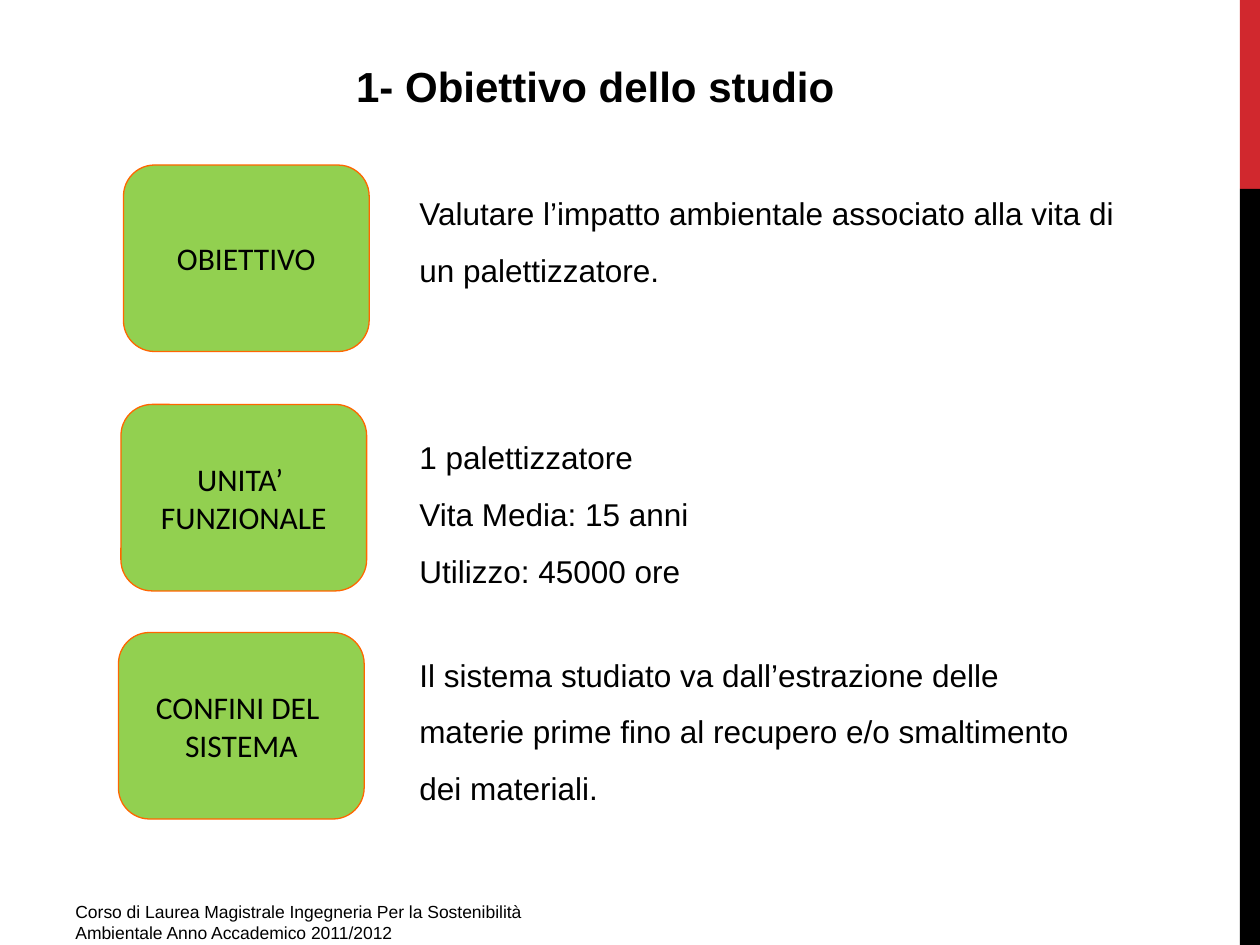
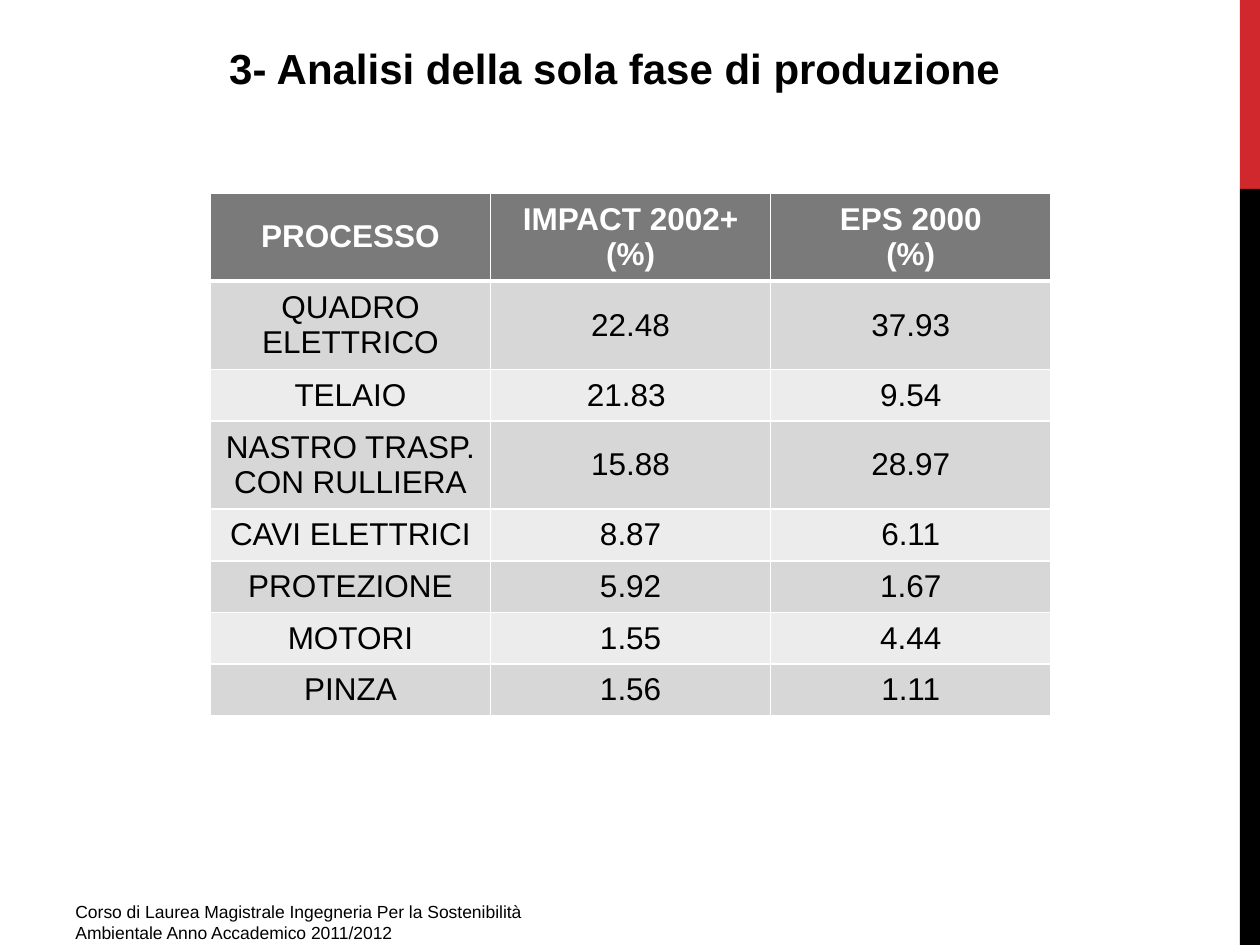
"""Build two slides on the life-cycle assessment of a palletiser."""
from dataclasses import dataclass

from lxml.etree import SubElement
from pptx import Presentation
from pptx.dml.color import RGBColor
from pptx.enum.shapes import MSO_SHAPE
from pptx.enum.text import MSO_ANCHOR, PP_ALIGN
from pptx.oxml.ns import qn
from pptx.util import Inches, Pt


@dataclass(frozen=True)
class Theme:
    black: RGBColor = RGBColor.from_string("000000")
    white: RGBColor = RGBColor.from_string("FFFFFF")
    red: RGBColor = RGBColor.from_string("D1282E")
    green: RGBColor = RGBColor.from_string("92D050")
    orange: RGBColor = RGBColor.from_string("FF6600")
    header: RGBColor = RGBColor.from_string("7A7A7A")
    dark_row: RGBColor = RGBColor.from_string("D7D7D7")
    light_row: RGBColor = RGBColor.from_string("ECECEC")
    font: str = "Arial"
    card_font: str = "Calibri"
    title_size: int = 24
    body_size: int = 18
    footer_size: int = 10


theme = Theme()


def write(frame, lines, size=theme.body_size, font=theme.font, color=theme.black,
          bold=False, align=PP_ALIGN.LEFT, spacing=None, anchor=MSO_ANCHOR.TOP):
    frame.word_wrap = True
    frame.vertical_anchor = anchor
    for index, line in enumerate(lines):
        paragraph = frame.add_paragraph() if index else frame.paragraphs[0]
        paragraph.alignment = align
        paragraph.line_spacing = spacing
        run = paragraph.add_run()
        run.text = line
        run.font.size = Pt(size)
        run.font.name = font
        run.font.bold = bold
        run.font.color.rgb = color


def add_box(slide, kind, box, fill, line=None):
    shape = slide.shapes.add_shape(kind, *map(Inches, box))
    shape.shadow.inherit = False
    shape.fill.solid()
    shape.fill.fore_color.rgb = fill
    if line is None:
        shape.line.fill.background()
    else:
        shape.line.color.rgb = line
        shape.line.width = Pt(0.75)
    return shape


presentation = Presentation()
presentation.slide_width = Inches(10)
presentation.slide_height = Inches(7.5)

titles = [
    ("1- Obiettivo dello studio", (0.08, 0.43, 9.29, 0.5)),
    ("3- Analisi della sola fase di produzione ", (0.75, 0.29, 8.35, 0.81)),
]
footer = ("Corso di Laurea Magistrale Ingegneria Per la Sostenibilità "
          "Ambientale Anno Accademico 2011/2012")

for title_text, box in titles:
    slide = presentation.slides.add_slide(presentation.slide_layouts[5])
    add_box(slide, MSO_SHAPE.RECTANGLE, (9.84, 0, 0.16, 1.5), theme.red)
    add_box(slide, MSO_SHAPE.RECTANGLE, (9.84, 1.5, 0.16, 6), theme.black)
    title = slide.shapes.title
    title.left, title.top, title.width, title.height = map(Inches, box)
    write(title.text_frame, [title_text], theme.title_size, bold=True, align=PP_ALIGN.CENTER)
    footer_box = slide.shapes.add_textbox(*map(Inches, (0.5, 7.1, 3.75, 0.31)))
    write(footer_box.text_frame, [footer], theme.footer_size)

goal_slide, production_slide = presentation.slides

topics = [
    (["OBIETTIVO"], (0.98, 1.31),
     ["Valutare l’impatto ambientale associato alla vita di un palettizzatore."],
     (3.23, 1.34, 5.78, 0.95), MSO_ANCHOR.TOP),
    (["UNITA’ ", "FUNZIONALE"], (0.96, 3.21),
     ["1 palettizzatore", "Vita Media: 15 anni", "Utilizzo: 45000 ore"],
     (3.23, 3.28, 5.78, 1.46), MSO_ANCHOR.TOP),
    (["CONFINI DEL ", "SISTEMA"], (0.94, 5.02),
     ["Il sistema studiato va dall’estrazione delle",
      "materie prime fino al recupero e/o smaltimento", "dei materiali."],
     (3.23, 4.96, 5.87, 1.54), MSO_ANCHOR.MIDDLE),
]
for label, position, description, box, anchor in topics:
    card = add_box(goal_slide, MSO_SHAPE.ROUNDED_RECTANGLE, (*position, 1.95, 1.48),
                   theme.green, theme.orange)
    write(card.text_frame, label, font=theme.card_font, align=PP_ALIGN.CENTER,
          anchor=MSO_ANCHOR.MIDDLE)
    description_box = goal_slide.shapes.add_textbox(*map(Inches, box))
    write(description_box.text_frame, description, spacing=1.5, anchor=anchor)

impacts = [
    ("PROCESSO", "IMPACT 2002+\n(%)", "EPS 2000\n(%)"),
    ("QUADRO ELETTRICO", "22.48", "37.93"),
    ("TELAIO", "21.83 ", "9.54"),
    ("NASTRO TRASP. CON RULLIERA", "15.88", "28.97"),
    ("CAVI ELETTRICI", "8.87", "6.11"),
    ("PROTEZIONE", "5.92", "1.67"),
    ("MOTORI", "1.55", "4.44"),
    ("PINZA", "1.56", "1.11"),
]
table = production_slide.shapes.add_table(
    len(impacts), len(impacts[0]), *map(Inches, (1.67, 1.53, 6.67, 4.13))).table
for row in table.rows:
    row.height = Inches(0.41)
for row_index, values in enumerate(impacts):
    is_header = row_index == 0
    row_fill = theme.dark_row if row_index % 2 else theme.light_row
    for column_index, value in enumerate(values):
        cell = table.cell(row_index, column_index)
        cell.fill.solid()
        cell.fill.fore_color.rgb = theme.header if is_header else row_fill
        write(cell.text_frame, value.split("\n"), bold=is_header, align=PP_ALIGN.CENTER,
              color=theme.white if is_header else theme.black)
        cell.vertical_anchor = MSO_ANCHOR.MIDDLE
        properties = cell._tc.get_or_add_tcPr()
        widths = {"a:lnL": 1, "a:lnR": 1, "a:lnT": 3 if row_index == 1 else 1,
                  "a:lnB": 3 if is_header else 1}
        for position, (side, width) in enumerate(widths.items()):
            border = SubElement(properties, qn(side), w=str(Pt(width)))
            border_fill = SubElement(border, qn("a:solidFill"))
            SubElement(border_fill, qn("a:srgbClr"), val=str(theme.white))
            properties.insert(position, border)

presentation.save("out.pptx")
